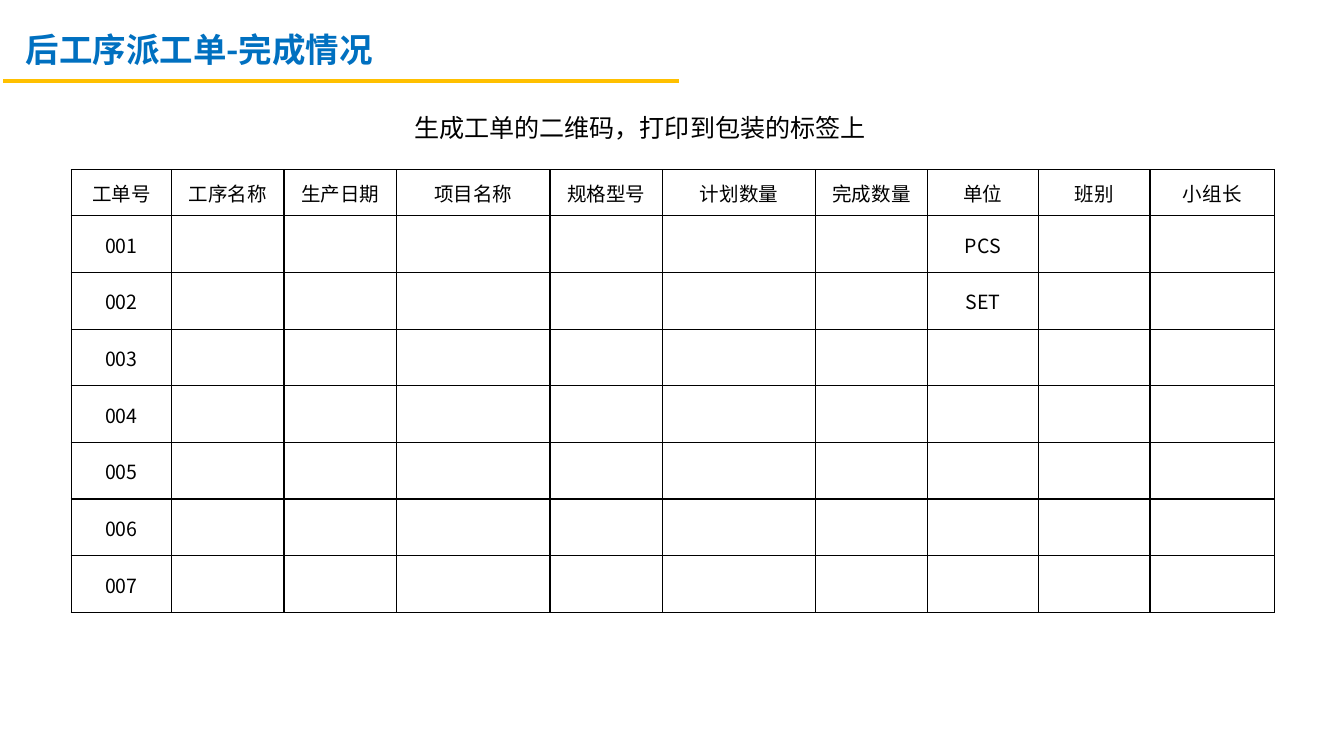
from lxml.etree import SubElement
from pptx import Presentation
from pptx.dml.color import RGBColor
from pptx.enum.shapes import MSO_CONNECTOR
from pptx.enum.text import MSO_ANCHOR, MSO_AUTO_SIZE, PP_ALIGN
from pptx.oxml.ns import qn
from pptx.util import Inches, Pt

# Content
TITLE = "后工序派工单-完成情况"
SUBTITLE = "生成工单的二维码，打印到包装的标签上"
# Heading and width of each column
COLUMNS = [
    ("工单号", 1.0), ("工序名称", 1.12), ("生产日期", 1.12), ("项目名称", 1.53),
    ("规格型号", 1.12), ("计划数量", 1.53), ("完成数量", 1.11), ("单位", 1.11),
    ("班别", 1.11), ("小组长", 1.24),
]
ORDERS = ["001", "002", "003", "004", "005", "006", "007"]
UNITS = {"001": "PCS", "002": "SET"}

# Style
FONT = "Noto Sans CJK SC"
BLACK, BLUE, GOLD = "000000", "0070C0", "FFC000"
TABLE_LEFT, TABLE_TOP, TABLE_HEIGHT, HEADING_HEIGHT = 0.71, 1.69, 4.41, 0.46


def rgb(value):
    return RGBColor.from_string(value)


def write(frame, text, size, color=BLACK, bold=False, align=PP_ALIGN.LEFT):
    frame.text = text
    paragraph = frame.paragraphs[0]
    paragraph.alignment = align
    font = paragraph.font
    font.name, font.size, font.bold = FONT, Pt(size), bold
    font.color.rgb = rgb(color)
    # East Asian characters take their own font entry
    defaults = paragraph._p.pPr.find(qn("a:defRPr"))
    SubElement(defaults, qn("a:ea"), typeface=FONT)
    return paragraph


def add_borders(cell):
    properties = cell._tc.get_or_add_tcPr()
    for side in ("a:lnL", "a:lnR", "a:lnT", "a:lnB"):
        border = SubElement(properties, qn(side), w=str(Pt(1)))
        fill = SubElement(border, qn("a:solidFill"))
        SubElement(fill, qn("a:srgbClr"), val=BLACK)


prs = Presentation()
prs.slide_width, prs.slide_height = Inches(13.39), Inches(7.48)
slide = prs.slides.add_slide(prs.slide_layouts[6])
shapes = slide.shapes

# Title and its rule
title = shapes.add_textbox(Inches(0.16), Inches(0.24), Inches(4.33), Inches(0.5)).text_frame
title.word_wrap = True
title.auto_size = MSO_AUTO_SIZE.SHAPE_TO_FIT_TEXT
write(title, TITLE, 24, BLUE, bold=True)

rule = shapes.add_connector(
    MSO_CONNECTOR.STRAIGHT, Inches(0.03), Inches(0.81), Inches(6.77), Inches(0.81))
rule.line.color.rgb = rgb(GOLD)
rule.line.width = Pt(3)
SubElement(rule._element.spPr, qn("a:effectLst"))

# Work order table
rows = [[heading for heading, _ in COLUMNS]]
for order in ORDERS:
    entries = {"工单号": order, "单位": UNITS.get(order, "")}
    rows.append([entries.get(heading, "") for heading, _ in COLUMNS])

table = shapes.add_table(
    len(rows), len(COLUMNS), Inches(TABLE_LEFT), Inches(TABLE_TOP),
    Inches(sum(width for _, width in COLUMNS)), Inches(TABLE_HEIGHT)).table
table.first_row = table.horz_banding = False
for column, (_, width) in zip(table.columns, COLUMNS):
    column.width = Inches(width)

order_height = (TABLE_HEIGHT - HEADING_HEIGHT) / len(ORDERS)
for r, entries in enumerate(rows):
    table.rows[r].height = Inches(order_height if r else HEADING_HEIGHT)
    for c, entry in enumerate(entries):
        cell = table.cell(r, c)
        add_borders(cell)
        cell.fill.background()
        cell.vertical_anchor = MSO_ANCHOR.MIDDLE
        cell.margin_left = cell.margin_right = cell.margin_top = Inches(0.01)
        cell.margin_bottom = 0
        write(cell.text_frame, entry, 14, align=PP_ALIGN.CENTER)

# Note above the table
subtitle = shapes.add_textbox(Inches(3.7), Inches(0.97), Inches(5.35), Inches(0.57)).text_frame
subtitle.word_wrap = False
subtitle.vertical_anchor = MSO_ANCHOR.MIDDLE
write(subtitle, SUBTITLE, 18, align=PP_ALIGN.CENTER).line_spacing = 1.1

prs.save("out.pptx")
